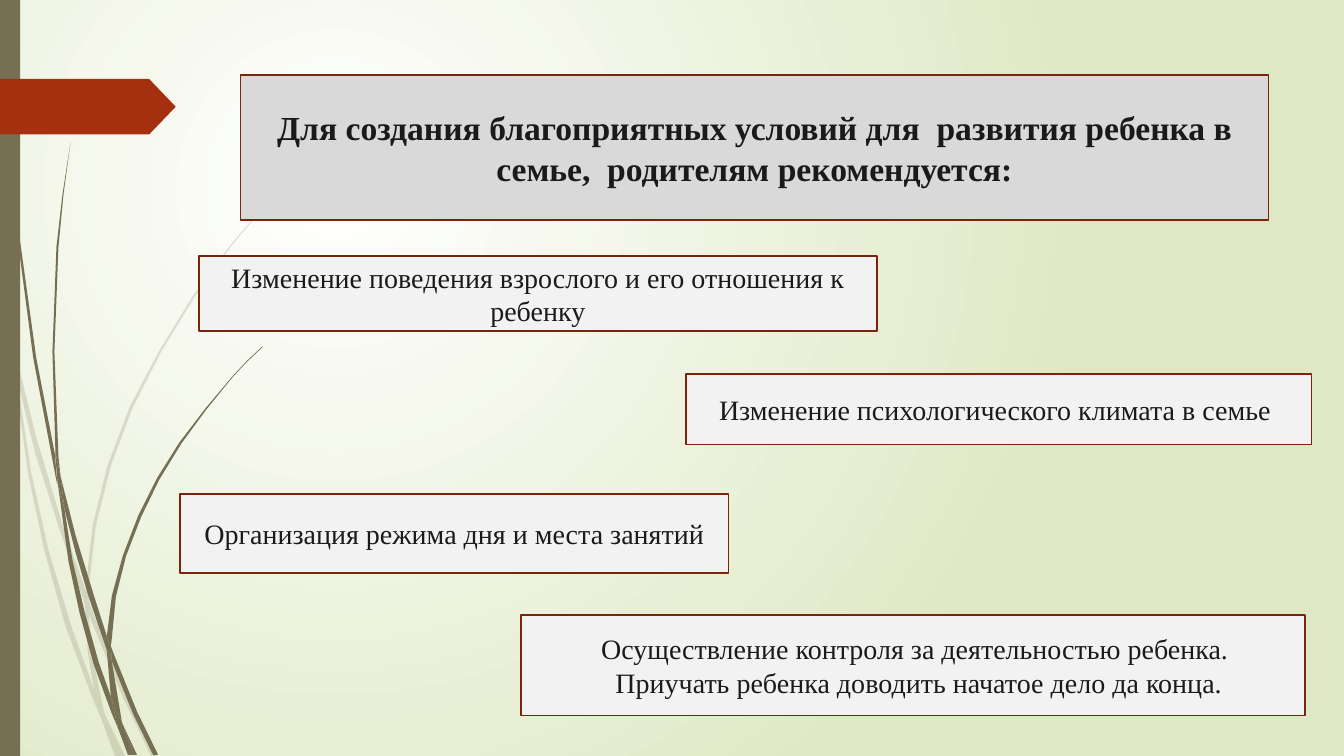
from lxml import etree
from pptx import Presentation, util as u
from pptx.dml.color import RGBColor
from pptx.enum import shapes, text
from pptx.oxml.ns import qn

OLIVE = RGBColor(0x76, 0x6F, 0x54)
RUST = RGBColor(0xA5, 0x30, 0x10)
EDGE = RGBColor(0x7A, 0x24, 0x0C)
GREY = RGBColor(0xD9, 0xD9, 0xD9)
PALE = RGBColor(0xF2, 0xF2, 0xF2)
INK = RGBColor(0x1A, 0x1A, 0x1A)
WHITE = RGBColor(0xFF, 0xFF, 0xFF)
LIME = RGBColor(0xDF, 0xE8, 0xC4)
WIDTH, HEIGHT = 33.87, 19.05
GRID_ROWS = 7.5

PALE_GRASS = [
    [(.11, 3.5), (.09, 3.22), (0, 2.82), (0, 2.99), (.1, 3.44)],
    [(.58, 5.22), (.84, 5.99), (.85, 5.86), (.62, 5.2), (.36, 4.34), (.14, 3.45), (.17, 3.76),
     (.35, 4.5)],
    [(.92, 6.07), (.88, 5.96), (.88, 6.1), (1.23, 6.94), (1.5, 7.5), (1.55, 7.5), (1.27, 6.92)],
    [(1.19, 7.5), (1.24, 7.5), (1.05, 7.11)],
    [(.93, 6.83), (.7, 6.19), (.48, 5.45), (.31, 4.69), (.17, 3.76), (.11, 3.5), (.28, 4.7),
     (.44, 5.46), (.65, 6.21), (.92, 6.93), (1.01, 7.14), (.99, 7.07)],
    [(.84, 5.99), (.87, 6.46), (.93, 6.83), (.96, 6.92), (1.05, 7.11), (1.03, 7.06),
     (.91, 6.46), (.88, 6.1), (.88, 6.08)],
    [(.88, 5.84), (.95, 5.22), (1.1, 4.62), (1.32, 4.04), (1.6, 3.49), (1.93, 2.95),
     (2.29, 2.45), (2.68, 1.98), (2.9, 1.75), (3.12, 1.54), (3.12, 1.53), (2.89, 1.75),
     (2.68, 1.97), (2.28, 2.44), (1.91, 2.94), (1.58, 3.48), (1.29, 4.03), (1.07, 4.61),
     (.92, 5.21), (.85, 5.84), (.85, 5.86), (.88, 5.96)],
    [(1.01, 7.14), (1.14, 7.5), (1.19, 7.5)],
    [(.88, 6.08), (.88, 6.1), (.88, 5.96), (.85, 5.86), (.84, 5.99)],
    [(.96, 6.92), (.93, 6.83), (.99, 7.07), (1.01, 7.14), (1.19, 7.5), (1.05, 7.11)],
]
DARK_GRASS = [
    [(.07, 1.1), (.17, 2.33), (.33, 3.55), (.56, 4.77), (.57, 4.81), (.55, 4.57), (.55, 4.53),
     (.36, 3.55), (.19, 2.32), (.08, 1.09), (.05, .48), (.04, 0), (.03, 0), (.04, .48)],
    [(.88, 5.92), (1.06, 6.45), (1.06, 6.33), (1.06, 6.31), (.93, 5.9), (.75, 5.31), (.6, 4.72),
     (.64, 5.05), (.75, 5.48)],
    [(1.13, 6.49), (1.1, 6.41), (1.11, 6.56), (1.32, 7.08), (1.52, 7.49), (1.57, 7.49),
     (1.36, 7.06)],
    [(1.1, 6.91), (.98, 6.57), (.84, 6.07), (.72, 5.56), (.64, 5.05), (.57, 4.77), (.68, 5.57),
     (.79, 6.08), (.93, 6.59), (1.11, 7.08), (1.17, 7.22), (1.16, 7.17)],
    [(.6, 4.72), (.58, 4.53), (.54, 3.49), (.58, 2.45), (.63, 1.93), (.7, 1.41), (.62, 1.93),
     (.56, 2.45), (.52, 3.49), (.55, 4.49)],
    [(1.33, 7.49), (1.36, 7.49), (1.22, 7.19)],
    [(.57, 4.77), (.64, 5.05), (.6, 4.72), (.55, 4.49), (.55, 4.53)],
    [(1.11, 6.33), (1.15, 5.92), (1.25, 5.52), (1.4, 5.13), (1.58, 4.76), (1.8, 4.4),
     (2.05, 4.06), (2.31, 3.74), (2.45, 3.59), (2.61, 3.44), (2.6, 3.44), (2.45, 3.58),
     (2.31, 3.73), (2.04, 4.05), (1.78, 4.39), (1.56, 4.74), (1.37, 5.12), (1.22, 5.51),
     (1.11, 5.91), (1.06, 6.31), (1.1, 6.41)],
    [(1.17, 7.22), (1.27, 7.49), (1.31, 7.49)],
    [(1.06, 6.45), (1.1, 6.91), (1.16, 7.06), (1.22, 7.19), (1.21, 7.16), (1.11, 6.56),
     (1.09, 6.51)],
    [(1.06, 6.45), (1.09, 6.51), (1.11, 6.56), (1.1, 6.41), (1.06, 6.31), (1.06, 6.33)],
    [(1.16, 7.06), (1.1, 6.91), (1.16, 7.17), (1.17, 7.22), (1.3, 7.49), (1.33, 7.49),
     (1.22, 7.19)],
]
ADVICE = [
    ((5.01, 6.46, 17.09, 1.88), ["Изменение поведения взрослого и его отношения к ребенку"], None),
    ((4.54, 12.44, 13.82, 2.01), ["Организация режима дня и места занятий"], None),
    ((17.28, 9.42, 15.77, 1.78), ["Изменение психологического климата в семье "], None),
    ((13.14, 15.49, 19.74, 2.54), ["Осуществление контроля за деятельностью ребенка.",
                                   "Приучать ребенка доводить начатое дело да конца."],
     [1.76, 2.12]),
]


def paint(shape, fill, line=None, alpha=None):
    """Set fill, outline and transparency, without a shadow."""
    shape.shadow.inherit = False
    shape.fill.solid()
    shape.fill.fore_color.rgb = fill
    if alpha is not None:
        color = shape.element.spPr.find(qn("a:solidFill"))[0]
        etree.SubElement(color, qn("a:alpha")).set("val", str(alpha * 1000))
    if line is None:
        shape.line.fill.background()
    else:
        shape.line.color.rgb = line
        shape.line.width = u.Pt(1.25)


def add_block(page, kind, box, fill, line=None):
    """Add a preset shape filling a box given in centimetres."""
    block = page.shapes.add_shape(kind, *map(u.Cm, box))
    paint(block, fill, line)
    return block


def write(para, words, size=20, bold=False, indent=None):
    """Write one paragraph, centred unless an indent in centimetres is given."""
    para.alignment = text.PP_ALIGN.CENTER if indent is None else text.PP_ALIGN.LEFT
    if indent is not None:
        para._p.get_or_add_pPr().set("marL", str(u.Cm(indent)))
    span = para.add_run()
    span.text = words
    span.font.name = "Times New Roman"
    span.font.size = u.Pt(size)
    span.font.bold = bold
    span.font.color.rgb = INK


def add_panel(page, box, lines, fill=PALE, indents=None, **style):
    """Add an outlined panel with one paragraph per line."""
    panel = add_block(page, shapes.MSO_SHAPE.RECTANGLE, box, fill, EDGE)
    frame = panel.text_frame
    frame.word_wrap = True
    frame.vertical_anchor = text.MSO_ANCHOR.MIDDLE
    for index, words in enumerate(lines):
        para = frame.paragraphs[0] if index == 0 else frame.add_paragraph()
        write(para, words, indent=indents[index] if indents else None, **style)


def add_grass(page, box, pieces, alpha=None):
    """Draw pieces of grass on a grid fitted to the box height."""
    left, top, _, height = box
    unit = height / GRID_ROWS
    for piece in pieces:
        corners = [(u.Cm(left + x * unit), u.Cm(top + y * unit)) for x, y in piece]
        builder = page.shapes.build_freeform(*corners[0])
        builder.add_line_segments(corners[1:])
        paint(builder.convert_to_shape(), OLIVE, alpha=alpha)


def add_backdrop(page):
    """Fill the background with a round gradient centred at upper left."""
    fill = page.background.fill
    fill.gradient()
    for stop, color, position in zip(fill.gradient_stops, (WHITE, LIME), (0, 1)):
        stop.color.rgb = color
        stop.position = position
    gradient = page.element.find(".//" + qn("a:gradFill"))
    linear = gradient.find(qn("a:lin"))
    circle = etree.Element(qn("a:path"), {"path": "circle"})
    etree.SubElement(circle, qn("a:fillToRect"),
                     {"l": "50000", "t": "50000", "r": "100000", "b": "100000"})
    gradient.replace(linear, circle)


def add_left_edge(page, box):
    """Draw the grass, the side bar and the arrow tag at the left of the box."""
    left, top, _, height = box
    add_grass(page, box, PALE_GRASS, alpha=20)
    add_grass(page, box, DARK_GRASS)
    add_block(page, shapes.MSO_SHAPE.RECTANGLE, (left, top, 0.51, height), OLIVE)
    tag = add_block(page, shapes.MSO_SHAPE.PENTAGON, (left, top + 1.99, 4.43, 1.4), RUST)
    tag.adjustments[0] = 0.48


def add_advice(page, box):
    """Place the heading and the advice panels relative to the box."""
    left, top = box[:2]
    heading = "Для создания благоприятных условий для  развития ребенка в семье,  родителям рекомендуется:"
    add_panel(page, (left + 6.06, top + 1.89, 25.91, 3.66), [heading], GREY, size=24, bold=True)
    for (x, y, width, height), lines, indents in ADVICE:
        add_panel(page, (left + x, top + y, width, height), lines, indents=indents)


def main():
    """Build and save the deck."""
    deck = Presentation()
    deck.slide_width, deck.slide_height = u.Cm(WIDTH), u.Cm(HEIGHT)
    page = deck.slides.add_slide(deck.slide_layouts[6])
    whole = (0, 0, WIDTH, HEIGHT)
    add_backdrop(page)
    add_left_edge(page, whole)
    add_advice(page, whole)
    deck.save("out.pptx")


if __name__ == "__main__":
    main()
